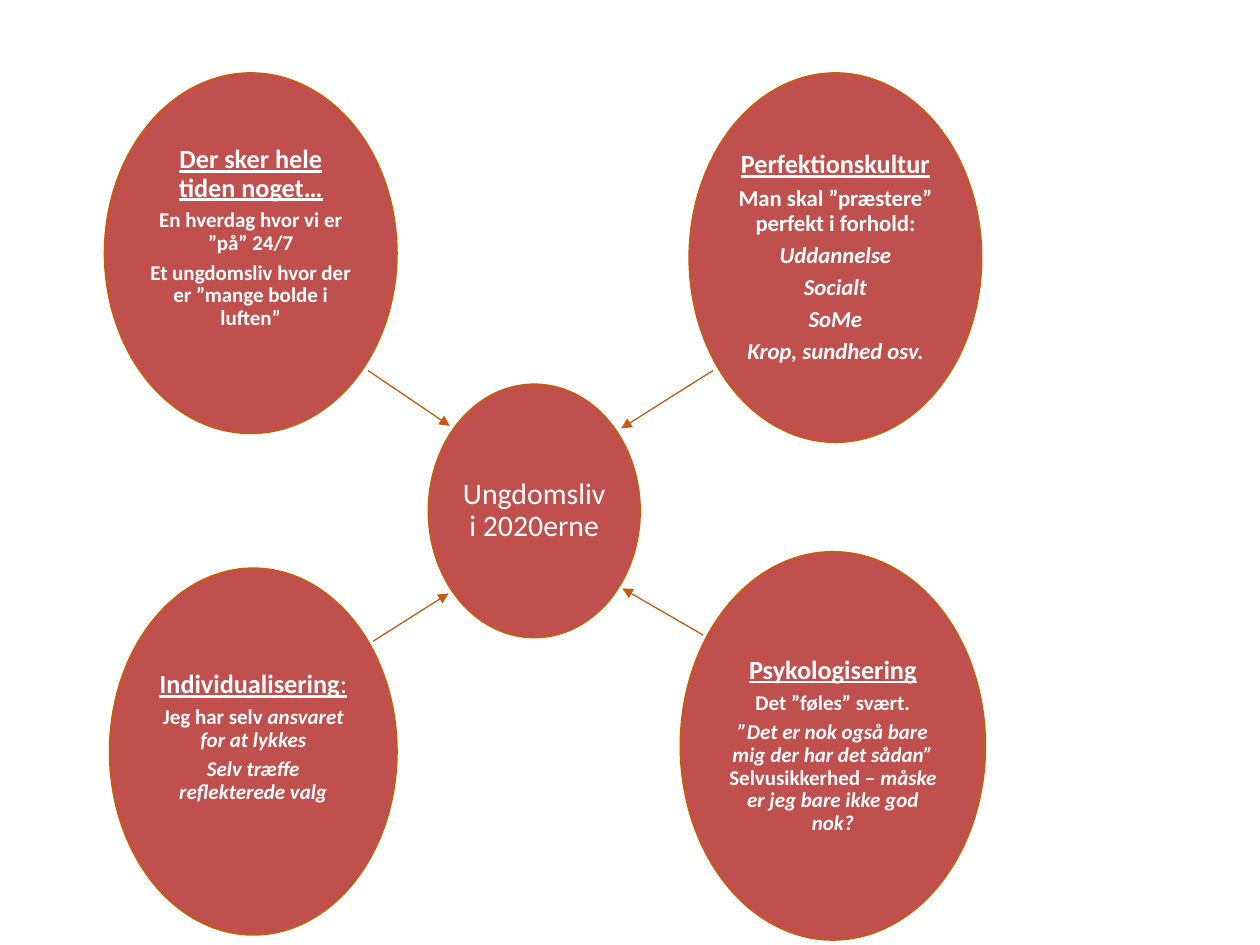
from lxml import etree
from pptx import Presentation
from pptx.dml.color import RGBColor
from pptx.enum.shapes import MSO_CONNECTOR, MSO_SHAPE
from pptx.enum.text import MSO_ANCHOR, PP_ALIGN
from pptx.oxml.ns import qn
from pptx.util import Inches, Pt

ELLIPSE = MSO_SHAPE.OVAL
STRAIGHT = MSO_CONNECTOR.STRAIGHT
MIDDLE = MSO_ANCHOR.MIDDLE
CENTER = PP_ALIGN.CENTER

THEME = {
    "font": "Calibri",
    "text": RGBColor(0xFF, 0xFF, 0xFF),
    "fill": RGBColor(0xC0, 0x50, 0x4D),
    "line": RGBColor(0xC5, 0x5A, 0x11),
    "hub_size": 17,
    "title_size": 15,
    "outline": 1,
    "arrow": 0.75,
}
INSET = 0.01

# Content: each paragraph is a list of (text, style); b bold, i italic, u underline
HUB = {"at": (3.4, 3.05, 1.68, 2.01), "text": "Ungdomsliv i 2020erne"}
THEMES = [
    {
        "at": (5.4, 4.38, 2.42, 3.08),
        "arrow": (5.58, 5.04, 4.94, 4.67),
        "size": 12, "gap": 3.9, "bottom": INSET,
        "title": [("Psykologisering", "bu")],
        "body": [
            [("Det ”føles” svært.", "b")],
            [("”Det er nok også bare mig der har det sådan” ", "bi"),
             ("Selvusikkerhed – ", "b"),
             ("måske er jeg bare ikke god nok?", "bi")],
        ],
    },
    {
        "at": (5.47, 0.58, 2.32, 2.93),
        "arrow": (5.66, 2.94, 4.93, 3.4),
        "size": 13, "gap": 4.2, "bottom": INSET,
        "title": [("Perfektionskultur", "bu")],
        "body": [
            [("Man skal ”præstere” perfekt i forhold:", "b")],
            [("Uddannelse", "bi")],
            [("Socialt", "bi")],
            [("SoMe", "bi")],
            [("Krop, sundhed osv.", "bi")],
        ],
    },
    {
        "at": (0.87, 4.51, 2.28, 2.91),
        "arrow": (2.96, 5.09, 3.56, 4.71),
        "size": 12, "gap": 3.9, "bottom": 0.23,
        "title": [("Individualisering", "bu"), (":", "u")],
        "body": [
            [("Jeg har selv", "b"), (" ansvaret for at lykkes", "bi")],
            [("Selv træffe reflekterede valg", "bi")],
        ],
    },
    {
        "at": (0.83, 0.58, 2.32, 2.86),
        "arrow": (2.92, 2.94, 3.57, 3.38),
        "size": 12, "gap": 3.9, "bottom": 0.25,
        "title": [("Der sker hele tiden noget…", "bu")],
        "body": [
            [("En hverdag hvor vi er ”på” 24/7", "b")],
            [("Et ungdomsliv hvor der er ”mange bolde i luften”", "b")],
        ],
    },
]


def add_circle(page, at, bottom=INSET):
    circle = page.shapes.add_shape(ELLIPSE, *map(Inches, at))
    circle.shadow.inherit = False
    circle.fill.solid()
    circle.fill.fore_color.rgb = THEME["fill"]
    circle.line.color.rgb = THEME["line"]
    circle.line.width = Pt(THEME["outline"])
    frame = circle.text_frame
    frame.word_wrap = True
    frame.vertical_anchor = MIDDLE
    frame.margin_left = frame.margin_right = frame.margin_top = Inches(INSET)
    frame.margin_bottom = Inches(bottom)
    return frame


def add_text(para, text, size, style=""):
    para.alignment = CENTER
    para.line_spacing = 0.9
    span = para.add_run()
    span.text = text
    font = span.font
    font.name = THEME["font"]
    font.size = Pt(size)
    font.color.rgb = THEME["text"]
    font.bold = "b" in style
    font.italic = "i" in style
    font.underline = "u" in style


def add_arrow(page, ends):
    arrow = page.shapes.add_connector(STRAIGHT, *map(Inches, ends))
    arrow.line.color.rgb = THEME["line"]
    arrow.line.width = Pt(THEME["arrow"])
    etree.SubElement(arrow.line._get_or_add_ln(), qn("a:tailEnd"), type="triangle")
    etree.SubElement(arrow._element.spPr, qn("a:effectLst"))


def main():
    deck = Presentation()
    deck.slide_width, deck.slide_height = Inches(10), Inches(7.5)
    page = deck.slides.add_slide(deck.slide_layouts[6])

    # Hub
    hub = add_circle(page, HUB["at"])
    add_text(hub.paragraphs[0], HUB["text"], THEME["hub_size"])

    # Surrounding themes, each with an arrow to the hub
    for theme in THEMES:
        add_arrow(page, theme["arrow"])
        frame = add_circle(page, theme["at"], theme["bottom"])
        for text, style in theme["title"]:
            add_text(frame.paragraphs[0], text, THEME["title_size"], style)
        for spans in theme["body"]:
            para = frame.add_paragraph()
            para.space_before = Pt(theme["gap"])
            for text, style in spans:
                add_text(para, text, theme["size"], style)

    deck.save("out.pptx")


if __name__ == "__main__":
    main()
